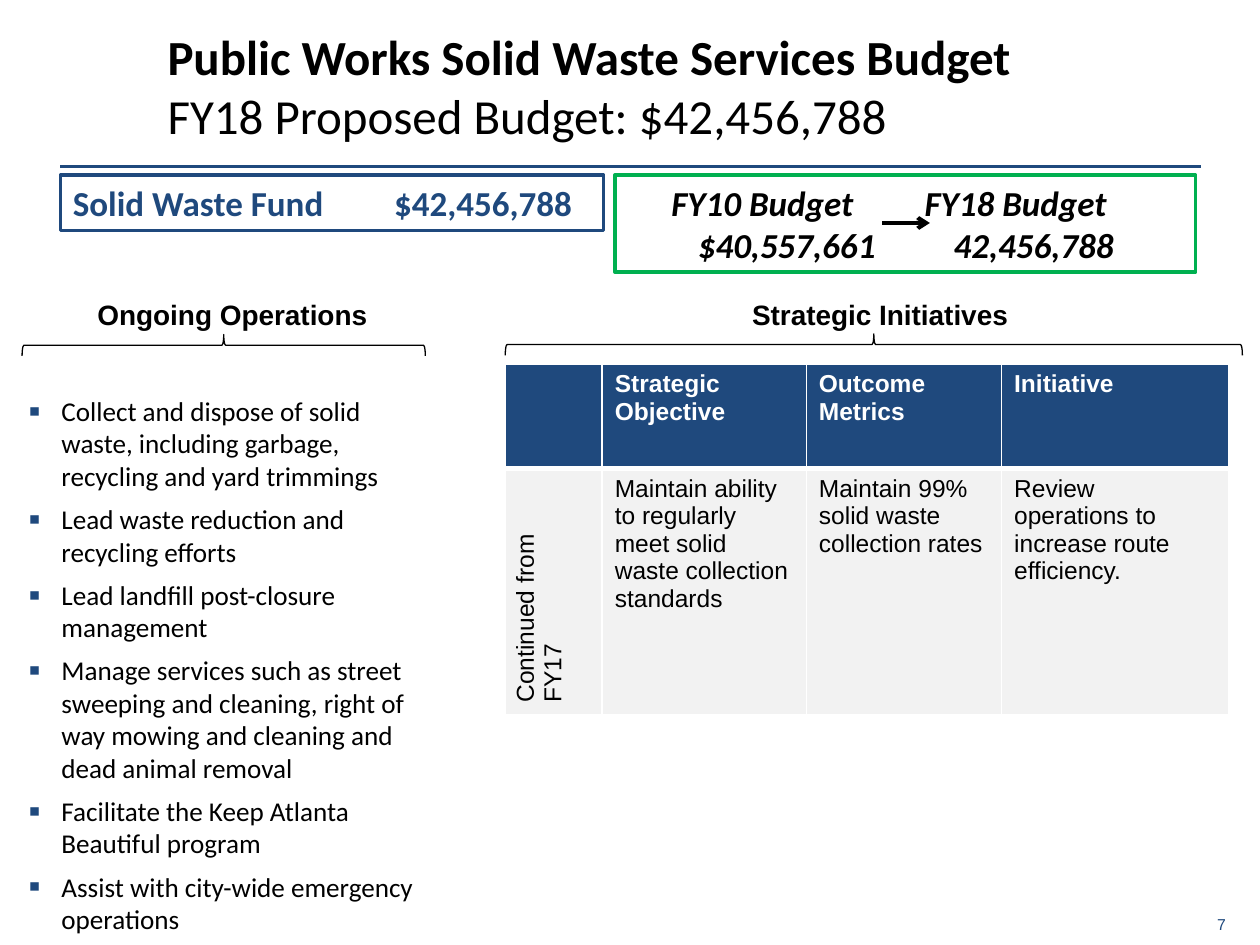
from lxml.etree import SubElement
from pptx import Presentation
from pptx.dml.color import RGBColor
from pptx.enum.shapes import MSO_CONNECTOR, MSO_SHAPE
from pptx.enum.text import MSO_ANCHOR, PP_ALIGN
from pptx.oxml.ns import qn
from pptx.util import Inches, Pt

HUES = {"navy": "1F497D", "green": "00B050", "black": "000000",
        "white": "FFFFFF", "gray": "F2F2F2"}

DUTIES = [
    "Collect and dispose of solid\nwaste, including garbage, recycling and yard trimmings",
    "Lead waste reduction and recycling efforts",
    "Lead landfill post-closure management",
    "Manage services such as street sweeping and cleaning, right of way "
    "mowing and cleaning and dead animal removal",
    "Facilitate the Keep Atlanta Beautiful program",
    "Assist with city-wide emergency operations",
]
ROWS = [
    ["", "Strategic Objective", "Outcome Metrics", "Initiative"],
    ["Continued from FY17",
     "Maintain ability to regularly meet solid waste collection standards",
     "Maintain 99% solid waste collection rates",
     "Review operations to increase route efficiency."],
]


def color(name):
    return RGBColor.from_string(HUES[name])


def inches(*nums):
    return [Inches(n) for n in nums]


def add_run(para, text, size, face="Calibri", hue="black", bold=False, slant=False):
    """Add one run, with line breaks where the text has them."""
    for i, part in enumerate(text.split("\n")):
        if i:
            para.add_line_break()
        run = para.add_run()
        run.text = part
        font = run.font
        font.size, font.name = Pt(size), face
        font.bold, font.italic = bold, slant
        font.color.rgb = color(hue)


def add_box(slide, *place):
    frame = slide.shapes.add_textbox(*inches(*place)).text_frame
    frame.word_wrap = True
    return frame


def add_line(slide, start, end, hue, width, arrow=False):
    line = slide.shapes.add_connector(MSO_CONNECTOR.STRAIGHT, *inches(*start, *end))
    line.line.color.rgb = color(hue)
    line.line.width = Pt(width)
    if arrow:
        SubElement(line.line._get_or_add_ln(), qn("a:tailEnd"), type="arrow")
    SubElement(line._element.spPr, qn("a:effectLst"))


def add_shape(slide, kind, place, hue, width):
    shape = slide.shapes.add_shape(kind, *inches(*place))
    shape.shadow.inherit = False
    shape.fill.background()
    shape.line.color.rgb = color(hue)
    shape.line.width = Pt(width)
    return shape


def add_brace(slide, left, top, height):
    place = (left, top, 0.17, height)
    add_shape(slide, MSO_SHAPE.LEFT_BRACE, place, "black", 0.75).rotation = 90


def add_tabs(para, stops):
    tabs = SubElement(para._p.get_or_add_pPr(), qn("a:tabLst"))
    for stop in stops:
        SubElement(tabs, qn("a:tab"), pos=str(Inches(stop)), algn="l")


def add_fund(slide, place, edge, lines, **look):
    """Add a framed box; each line is its text and its tab stops."""
    frame = add_shape(slide, MSO_SHAPE.RECTANGLE, place, edge, 2).text_frame
    frame.word_wrap = True
    frame.vertical_anchor = MSO_ANCHOR.TOP
    for i, (text, stops) in enumerate(lines):
        para = frame.add_paragraph() if i else frame.paragraphs[0]
        para.alignment = PP_ALIGN.LEFT
        add_tabs(para, stops)
        add_run(para, text, 20, bold=True, **look)


def add_head(slide, text, *place):
    para = add_box(slide, *place).paragraphs[0]
    para.alignment = PP_ALIGN.CENTER
    add_run(para, text, 16, "Arial", bold=True)


def add_list(slide, items, *place):
    frame = add_box(slide, *place)
    for i, item in enumerate(items):
        para = frame.add_paragraph() if i else frame.paragraphs[0]
        if i:
            para.space_before = Pt(6)
        props = para._p.get_or_add_pPr()
        props.set("marL", str(Inches(0.26)))
        props.set("indent", str(Inches(-0.26)))
        tint = SubElement(props, qn("a:buClr"))
        SubElement(tint, qn("a:srgbClr"), val=HUES["navy"])
        SubElement(props, qn("a:buSzPct"), val="125000")
        SubElement(props, qn("a:buFont"), typeface="Arial")
        SubElement(props, qn("a:buChar"), char="▪")
        add_run(para, item, 15.5)


def add_edges(cell, base):
    """Draw white cell borders, with the given width at the bottom."""
    props = cell._tc.get_or_add_tcPr()
    for side, width in (("L", 1), ("R", 1), ("T", 1), ("B", base)):
        edge = SubElement(props, qn("a:ln" + side), w=str(Pt(width)))
        fill = SubElement(edge, qn("a:solidFill"))
        SubElement(fill, qn("a:srgbClr"), val=HUES["white"])


def add_grid(slide):
    wide, tall = [0.77, 1.62, 1.55, 1.8], [0.83, 1.95]
    place = inches(4.01, 2.89, sum(wide), sum(tall))
    table = slide.shapes.add_table(len(tall), len(wide), *place).table
    table.horz_banding = False
    for col, size in zip(table.columns, wide):
        col.width = Inches(size)
    for r, texts in enumerate(ROWS):
        table.rows[r].height = Inches(tall[r])
        head = r == 0
        for c, text in enumerate(texts):
            cell = table.cell(r, c)
            add_edges(cell, 3 if head else 1)
            cell.fill.solid()
            cell.fill.fore_color.rgb = color("navy" if head else "gray")
            if text:
                add_run(cell.text_frame.paragraphs[0], text, 14, "Arial",
                        "white" if head else "black", head)
    table.cell(1, 0)._tc.get_or_add_tcPr().set("vert", "vert270")


def main():
    deck = Presentation()
    deck.slide_width, deck.slide_height = inches(10, 7.5)
    slide = deck.slides.add_slide(deck.slide_layouts[6])

    page = add_box(slide, 9.57, 7.22, 0.33, 0.24)
    page.word_wrap = False
    page.margin_left = page.margin_right = Inches(0.09)
    page.margin_top = page.margin_bottom = Inches(0.04)
    add_run(page.paragraphs[0], "7", 9, "Arial", "navy")
    add_line(slide, (0.48, 1.32), (9.53, 1.32), "navy", 1.5)

    title = add_box(slide, 1.18, 0.16, 7.76, 1.04)
    title.margin_left = Inches(0.15)
    title.vertical_anchor = MSO_ANCHOR.MIDDLE
    para = title.paragraphs[0]
    add_run(para, "Public Works Solid Waste Services Budget", 28, bold=True)
    para.add_line_break()
    add_run(para, "FY18 Proposed Budget: $42,456,788", 28)

    add_list(slide, DUTIES, 0.13, 3.08, 3.46, 4.28)
    add_head(slide, "Ongoing Operations", 0.07, 2.31, 3.55, 0.37)
    add_head(slide, "Strategic Initiatives", 5.36, 2.31, 3.25, 0.37)
    add_brace(slide, 6.85, -0.19, 5.85)
    add_brace(slide, 1.69, 1.14, 3.2)
    add_grid(slide)

    add_fund(slide, (4.88, 1.39, 4.61, 0.77), "green",
             [("\tFY10 Budget\tFY18 Budget", (0.35, 2.36)),
              ("\t$40,557,661\t42,456,788", (0.56, 2.59))], slant=True)
    add_fund(slide, (0.48, 1.39, 4.31, 0.44), "navy",
             [("Solid Waste Fund\t$42,456,788", (2.55,))], hue="navy")
    add_line(slide, (7, 1.77), (7.38, 1.77), "black", 2.25, arrow=True)
    deck.save("out.pptx")


if __name__ == "__main__":
    main()
